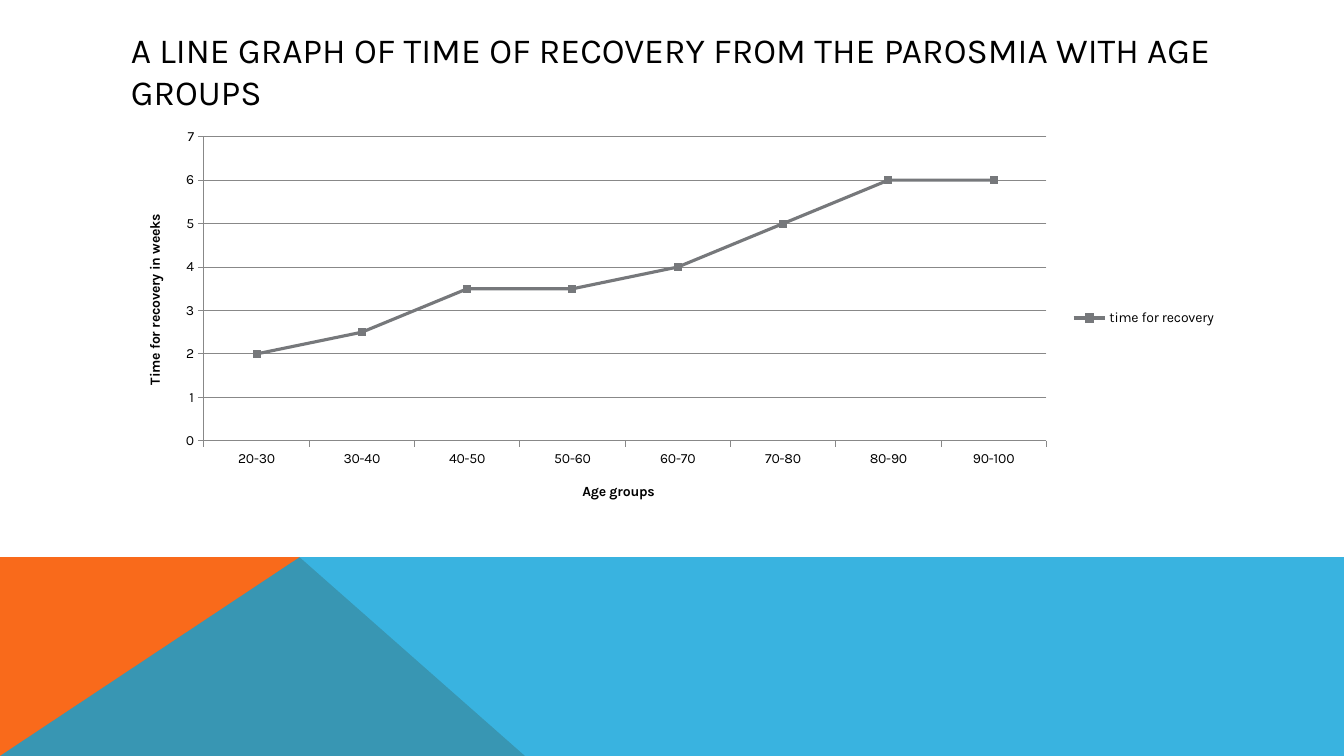
from pptx import Presentation
from pptx.chart.data import CategoryChartData
from pptx.dml.color import RGBColor
from pptx.enum.chart import XL_CHART_TYPE as ChartType, XL_LEGEND_POSITION as LegendPosition
from pptx.enum.chart import XL_MARKER_STYLE as MarkerStyle, XL_TICK_MARK as TickMark
from pptx.enum.text import MSO_ANCHOR as Anchor
from pptx.oxml import parse_xml
from pptx.oxml.ns import nsdecls, qn
from pptx.util import Pt

BLACK = RGBColor(0x00, 0x00, 0x00)
ORANGE = RGBColor(0xF9, 0x6A, 0x1B)
BLUE = RGBColor(0x08, 0xA1, 0xD9)
AXIS_GRAY = RGBColor(0x88, 0x88, 0x88)
SERIES_GRAY = RGBColor(0x76, 0x78, 0x7B)
MARKER_GRAY = RGBColor(0x79, 0x7B, 0x7E)
FONT = "Karla"

WIDTH, HEIGHT = 960, 540
BAND_TOP = 397.6
LEFT, CONTENT_WIDTH = 86.4, 789.8

TITLE = "A LINE GRAPH OF TIME OF RECOVERY FROM THE PAROSMIA WITH AGE GROUPS"
AGE_GROUPS = ["20-30", "30-40", "40-50", "50-60", "60-70", "70-80", "80-90", "90-100"]
RECOVERY_WEEKS = [2, 2.5, 3.5, 3.5, 4, 5, 6, 6]


def set_font(font, size, bold=False):
    font.name, font.size, font.bold = FONT, Pt(size), bold
    font.color.rgb = BLACK


def add_band(slide, points, color, opacity=100):
    builder = slide.shapes.build_freeform(*points[0], scale=Pt(1))
    builder.add_line_segments(points[1:], close=True)
    band = builder.convert_to_shape()
    band.shadow.inherit = False
    band.line.fill.background()
    band.fill.solid()
    band.fill.fore_color.rgb = color
    if opacity < 100:
        fill_color = band.element.xpath("./p:spPr/a:solidFill/a:srgbClr")[0]
        fill_color.append(parse_xml(f'<a:alpha {nsdecls("a")} val="{opacity * 1000}"/>'))


def add_title(slide):
    frame = slide.shapes.add_textbox(Pt(LEFT), Pt(28.8), Pt(CONTENT_WIDTH), Pt(43.2)).text_frame
    frame.word_wrap = True
    frame.vertical_anchor = Anchor.MIDDLE
    heading = frame.paragraphs[0]
    heading.text = TITLE
    set_font(heading.font, 25.2)


def place(element, index, target="", **fractions):
    """Position a chart part by fractions of the chart area."""
    for old in element.findall(qn("c:layout")):
        element.remove(old)
    inner = f'<c:layoutTarget val="{target}"/>' if target else ""
    modes = '<c:xMode val="edge"/><c:yMode val="edge"/>'
    sizes = "".join(f'<c:{key} val="{value}"/>' for key, value in fractions.items())
    element.insert(index, parse_xml(
        f'<c:layout {nsdecls("c")}><c:manualLayout>{inner}{modes}{sizes}'
        '</c:manualLayout></c:layout>'))


def style_line(line, color, width):
    line.color.rgb = color
    line.width = Pt(width)


def style_axis(axis, caption, x, y):
    axis.major_tick_mark = TickMark.OUTSIDE
    axis.minor_tick_mark = TickMark.NONE
    style_line(axis.format.line, AXIS_GRAY, 0.75)
    set_font(axis.tick_labels.font, 10)
    paragraph = axis.axis_title.text_frame.paragraphs[0]
    paragraph.text = caption
    set_font(paragraph.font, 10, bold=True)
    place(axis.axis_title.element, 1, x=x, y=y)


def add_recovery_chart(slide):
    data = CategoryChartData()
    data.categories = AGE_GROUPS
    data.add_series("time for recovery", RECOVERY_WEEKS)
    chart = slide.shapes.add_chart(ChartType.LINE_MARKERS, Pt(LEFT), Pt(86.4),
                                   Pt(CONTENT_WIDTH), Pt(281.5), data).chart
    set_font(chart.font, 10)
    chart.has_title = False
    chart.plots[0].vary_by_categories = False
    place(chart.element.xpath("./c:chart/c:plotArea")[0], 0, "inner",
          x=0.075, y=0.04, w=0.762, h=0.772)

    # Axes
    style_axis(chart.category_axis, "Age groups", 0.415, 0.91)
    weeks_axis = chart.value_axis
    style_axis(weeks_axis, "Time for recovery in weeks", 0.02, 0.23)
    weeks_axis.minimum_scale, weeks_axis.maximum_scale, weeks_axis.major_unit = 0, 7, 1
    weeks_axis.has_major_gridlines = True
    style_line(weeks_axis.major_gridlines.format.line, AXIS_GRAY, 0.75)

    # Series
    recovery = chart.plots[0].series[0]
    recovery.smooth = False
    style_line(recovery.format.line, SERIES_GRAY, 2.25)
    marker = recovery.marker
    marker.style, marker.size = MarkerStyle.SQUARE, 5
    marker.format.fill.solid()
    marker.format.fill.fore_color.rgb = MARKER_GRAY
    style_line(marker.format.line, SERIES_GRAY, 0.75)

    # Legend
    chart.has_legend = True
    chart.legend.position = LegendPosition.RIGHT
    chart.legend.include_in_layout = False
    set_font(chart.legend.font, 10)


def main():
    deck = Presentation()
    deck.slide_width, deck.slide_height = Pt(WIDTH), Pt(HEIGHT)
    slide = deck.slides.add_slide(deck.slide_layouts[6])

    # Bottom bands
    add_band(slide, [(0, HEIGHT), (0, BAND_TOP), (214.5, BAND_TOP), (375, HEIGHT)], ORANGE)
    add_band(slide, [(0, HEIGHT), (214, BAND_TOP), (WIDTH, BAND_TOP), (WIDTH, HEIGHT)], BLUE, 80)

    # Heading and chart
    add_title(slide)
    add_recovery_chart(slide)
    deck.save("out.pptx")


if __name__ == "__main__":
    main()
